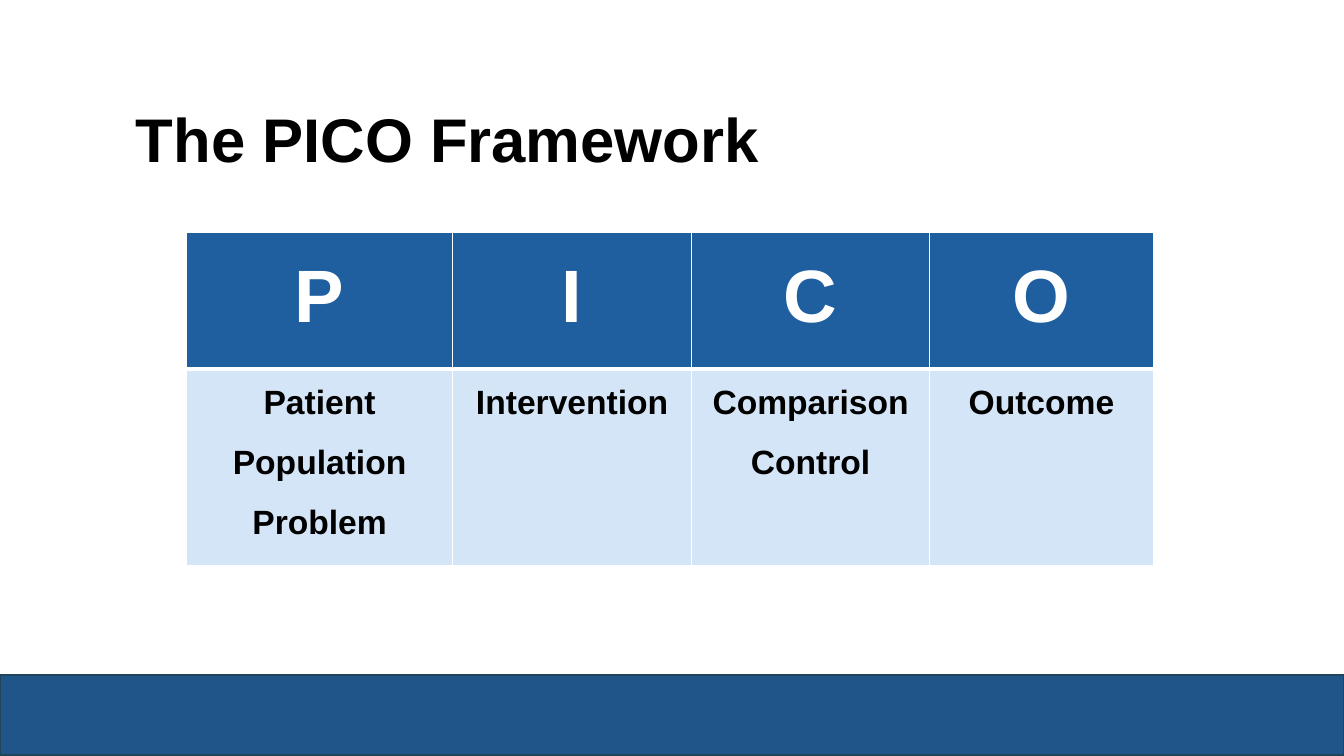
from lxml.etree import SubElement
from pptx import Presentation
from pptx.dml.color import RGBColor
from pptx.enum.shapes import MSO_SHAPE
from pptx.enum.text import MSO_ANCHOR, PP_ALIGN
from pptx.oxml.ns import qn
from pptx.util import Inches, Pt

FONT = "Arial"
WHITE, BLACK = "FFFFFF", "000000"
HEADER_BLUE, BODY_BLUE = "1F5FA0", "D4E5F7"
BAND_BLUE, BAND_EDGE = "20558A", "20455A"
COLUMN_WIDTHS = [2.64, 2.37, 2.36, 2.22]
ROW_HEIGHTS = [1.35, 1.96]
PICO = [
    ("P", ["Patient", "Population", "Problem"]),
    ("I", ["Intervention"]),
    ("C", ["Comparison", "Control"]),
    ("O", ["Outcome"]),
]


def color(value):
    """Turn a hex string into a colour."""
    return RGBColor.from_string(value)


def style_paragraph(paragraph, size, text_color, line_spacing):
    """Set the bold type and line spacing of a paragraph."""
    paragraph.line_spacing = line_spacing
    for run in paragraph.runs:
        run.font.name = FONT
        run.font.size = Pt(size)
        run.font.bold = True
        run.font.color.rgb = color(text_color)


def add_border(cell, side, width):
    """Draw a white line on one side of a table cell."""
    line = SubElement(cell._tc.get_or_add_tcPr(), qn(f"a:{side}"), w=str(Pt(width)))
    fill = SubElement(line, qn("a:solidFill"))
    SubElement(fill, qn("a:srgbClr"), val=WHITE)


def fill_cell(cell, lines, size, text_color, fill_color, top_width):
    """Write centred lines into a bordered, filled cell."""
    cell.margin_left = cell.margin_right = Inches(0.1)
    cell.margin_top = cell.margin_bottom = Inches(0.1)
    for side, width in (("lnL", 1), ("lnR", 1), ("lnT", top_width), ("lnB", 3)):
        add_border(cell, side, width)
    cell.fill.solid()
    cell.fill.fore_color.rgb = color(fill_color)
    cell.text_frame.text = "\n".join(lines)
    for index, paragraph in enumerate(cell.text_frame.paragraphs):
        paragraph.alignment = PP_ALIGN.CENTER
        if index:
            paragraph.space_before = Pt(12)
        style_paragraph(paragraph, size, text_color, 1.15)


def add_footer_band(slide, left, top, width, height):
    """Add the blue band along the foot of the slide."""
    band = slide.shapes.add_shape(MSO_SHAPE.RECTANGLE, left, top, width, height)
    band.shadow.inherit = False
    band.fill.solid()
    band.fill.fore_color.rgb = color(BAND_BLUE)
    band.line.color.rgb = color(BAND_EDGE)
    band.line.width = Pt(1.5)


def add_title(slide, left, top, width, height):
    """Add the slide heading."""
    text_frame = slide.shapes.add_textbox(left, top, width, height).text_frame
    text_frame.word_wrap = True
    text_frame.vertical_anchor = MSO_ANCHOR.MIDDLE
    text_frame.text = "The PICO Framework"
    style_paragraph(text_frame.paragraphs[0], 44, BLACK, 0.9)


def add_pico_table(slide, left, top, width, height):
    """Add the table of letters and their meanings."""
    table = slide.shapes.add_table(
        len(ROW_HEIGHTS), len(PICO), left, top, width, height
    ).table
    for row, share in zip(table.rows, ROW_HEIGHTS):
        row.height = int(height * share / sum(ROW_HEIGHTS))
    for index, (letter, meanings) in enumerate(PICO):
        table.columns[index].width = int(
            width * COLUMN_WIDTHS[index] / sum(COLUMN_WIDTHS)
        )
        fill_cell(table.cell(0, index), [letter], 53, WHITE, HEADER_BLUE, 1)
        fill_cell(table.cell(1, index), meanings, 24, BLACK, BODY_BLUE, 3)


def main():
    """Build and save the slide."""
    presentation = Presentation()
    presentation.slide_width = Inches(13.33)
    presentation.slide_height = Inches(7.5)
    slide = presentation.slides.add_slide(presentation.slide_layouts[6])
    add_footer_band(slide, 0, Inches(6.7), presentation.slide_width, Inches(0.79))
    add_title(slide, Inches(1.25), Inches(0.67), Inches(10.8), Inches(1.48))
    add_pico_table(
        slide,
        Inches(1.85),
        Inches(2.31),
        Inches(sum(COLUMN_WIDTHS)),
        Inches(sum(ROW_HEIGHTS)),
    )
    presentation.save("out.pptx")


if __name__ == "__main__":
    main()
